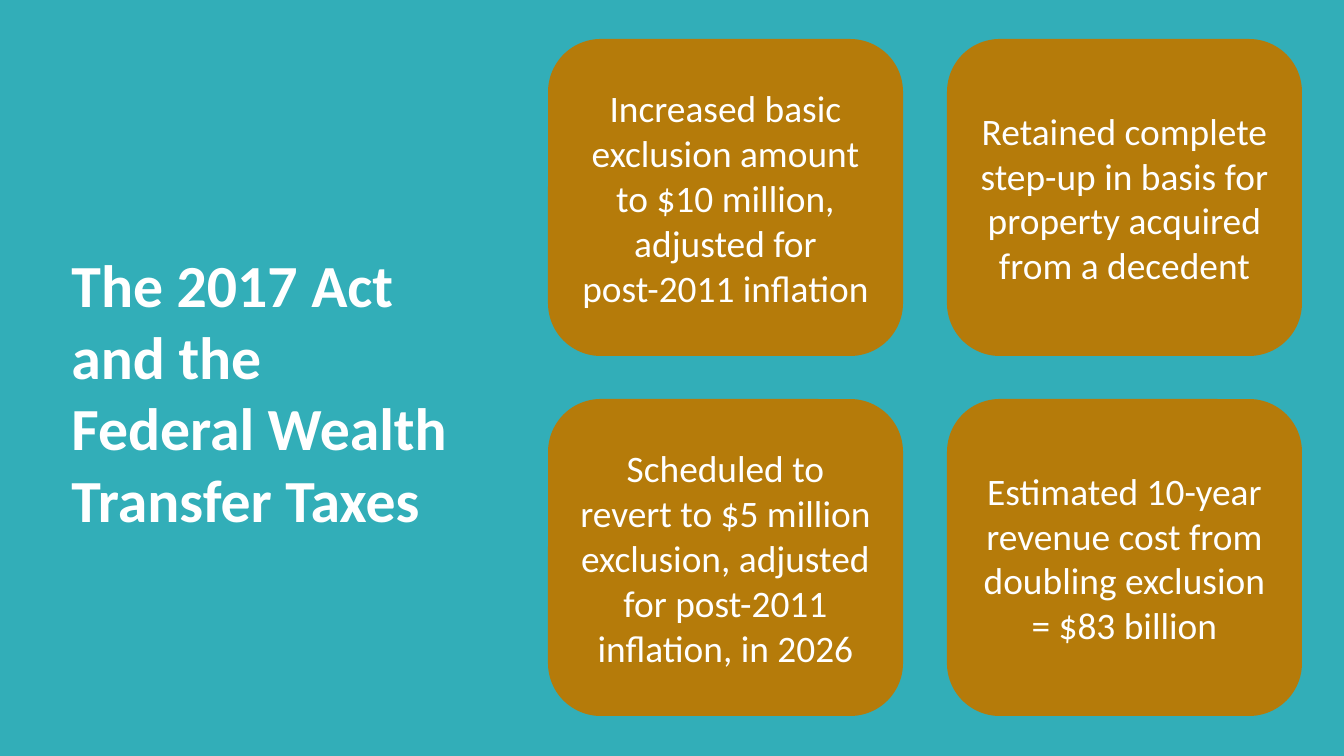
from dataclasses import dataclass

from pptx import Presentation
from pptx.dml.color import RGBColor
from pptx.enum.shapes import MSO_SHAPE
from pptx.enum.text import MSO_ANCHOR, MSO_AUTO_SIZE, PP_ALIGN
from pptx.util import Pt

ROUND = MSO_SHAPE.ROUNDED_RECTANGLE
TOP, MIDDLE = MSO_ANCHOR.TOP, MSO_ANCHOR.MIDDLE
LEFT, CENTER = PP_ALIGN.LEFT, PP_ALIGN.CENTER
NO_FIT = MSO_AUTO_SIZE.NONE
SCALE = 914400 / 134.4  # EMU in one px


@dataclass(frozen=True)
class Theme:
    back: RGBColor = RGBColor(0x32, 0xAE, 0xB8)
    card: RGBColor = RGBColor(0xB5, 0x7B, 0x0A)
    ink: RGBColor = RGBColor(0xFF, 0xFF, 0xFF)
    font: str = "Calibri"
    head: int = 32
    body: int = 20


THEME = Theme()
TITLE = "The 2017 Act and the Federal Wealth Transfer Taxes"
CARDS = [
    "Increased basic exclusion amount to $10 million, adjusted for post-2011 inflation",
    "Retained complete step-up in basis for property acquired from a decedent",
    "Scheduled to revert to $5 million exclusion, adjusted for post-2011 inflation, in 2026",
    "Estimated 10-year revenue cost from doubling exclusion = $83 billion",
]

# Card grid, in px
GRID_X, GRID_Y = 548, 39
CARD_W, CARD_H = 355, 317
STEP_X, STEP_Y = 399, 360


def px(value):
    return round(value * SCALE)


def apply(target, values):
    for name, value in values.items():
        setattr(target, name, value)


def write(shape, text, size, bold, align, anchor):
    """Fill a shape with one formatted paragraph."""
    frame = shape.text_frame
    frame.text = text
    apply(frame, {"word_wrap": True, "auto_size": NO_FIT, "vertical_anchor": anchor})
    para = frame.paragraphs[0]
    para.alignment = align
    font = para.runs[0].font
    apply(font, {"name": THEME.font, "size": Pt(size), "bold": bold})
    font.color.rgb = THEME.ink


def add_title(slide):
    title = slide.shapes.title
    apply(title, {"left": px(58), "top": px(241), "width": px(413), "height": px(232)})
    write(title, TITLE, THEME.head, True, LEFT, TOP)


def add_card(slide, index, text):
    row, col = divmod(index, 2)
    box = (GRID_X + col * STEP_X, GRID_Y + row * STEP_Y, CARD_W, CARD_H)
    card = slide.shapes.add_shape(ROUND, *map(px, box))
    card.shadow.inherit = False
    card.fill.solid()
    card.fill.fore_color.rgb = THEME.card
    card.line.fill.background()
    write(card, text, THEME.body, False, CENTER, MIDDLE)


def main():
    deck = Presentation()
    apply(deck, {"slide_width": px(1344), "slide_height": px(756)})
    slide = deck.slides.add_slide(deck.slide_layouts[5])

    # Background
    fill = slide.background.fill
    fill.solid()
    fill.fore_color.rgb = THEME.back

    # Title on the left, two by two cards on the right
    add_title(slide)
    for index, text in enumerate(CARDS):
        add_card(slide, index, text)
    deck.save("out.pptx")


if __name__ == "__main__":
    main()
